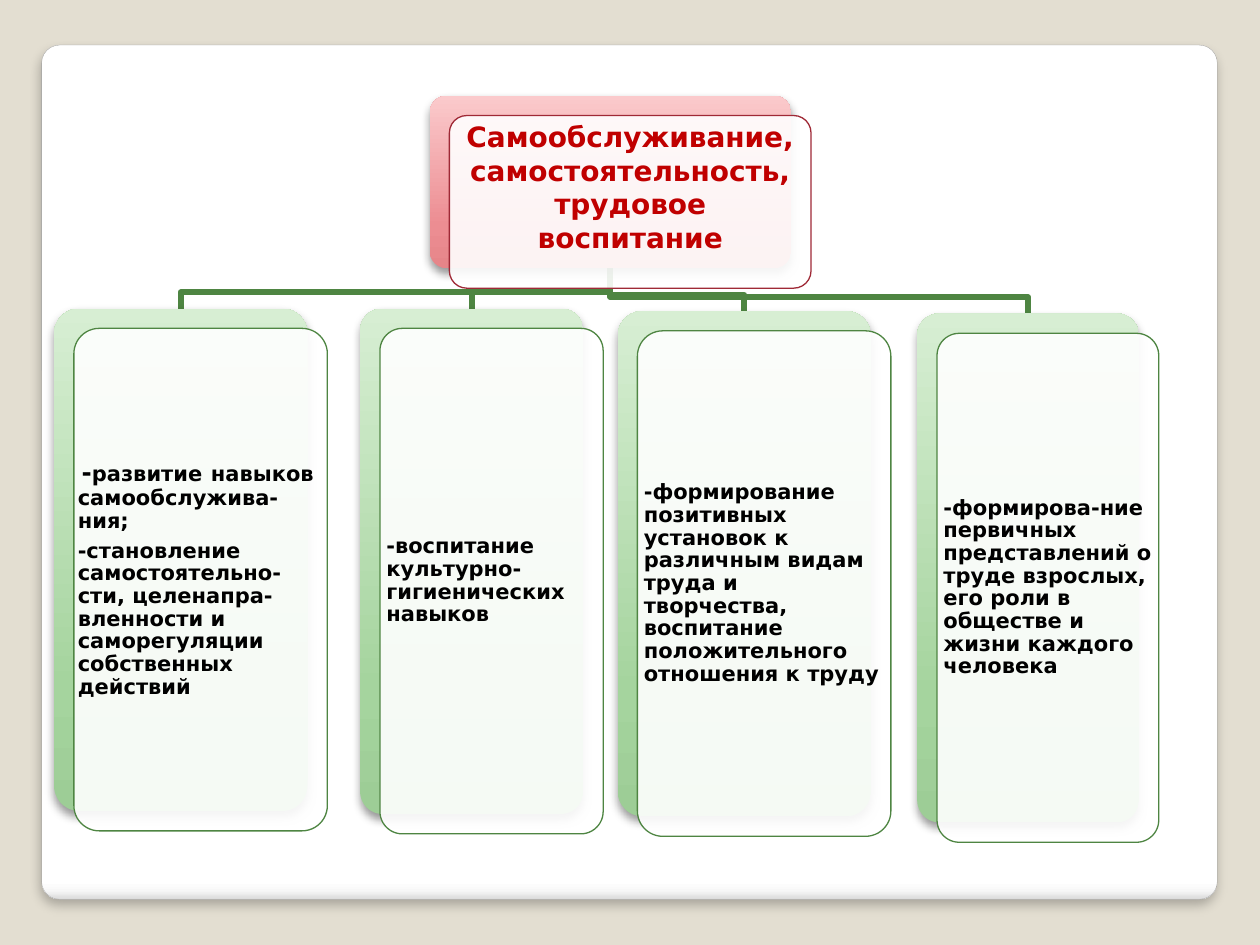
import pptx
import pptx.util
import pptx.dml.color
import pptx.enum.shapes
import pptx.enum.text
import pptx.oxml
import pptx.oxml.ns

Cm, Pt = pptx.util.Cm, pptx.util.Pt
ALIGN = pptx.enum.text.PP_ALIGN
ANCHOR = pptx.enum.text.MSO_ANCHOR
FONT = "DejaVu Sans"
NS = pptx.oxml.ns.nsdecls("a")
SHIFT = 0.4   # offset of a card's face from its back, cm
DROP = 0.33   # height of the last leg of a branch, cm

RED = dict(stops=[(0, "E68589"), (25, "EC8D92"), (100, "FBCACC")], edge="9F2936")
GREEN = dict(stops=[(0, "9DCD96"), (25, "A5D49E"), (100, "D7EED3")], edge="4E8542")
PANEL = [(0, "FFFFFF"), (98, "FFFFFF"), (99, "F7F7F7"), (100, "DADADA")]

# Each card: box (left, top, width, height in cm), inset, paragraphs of (text, size, bold)
CARDS = [
    ((1.09, 6.22, 5.11, 10.13), 0.08, [
        [(" ", 7, False), ("-", 14, True), ("развитие", 12, True), (" ", 14, True),
         ("навыков самообслужива-ния;", 12, True)],
        [("-становление самостоятельно-сти, целенапра-вленности и "
          "саморегуляции собственных действий", 12, True)]]),
    ((7.26, 6.22, 4.5, 10.19), 0.13, [
        [("-воспитание культурно-гигиенических навыков", 12, True)]]),
    ((12.45, 6.27, 5.11, 10.19), 0.13, [
        [("-формирование позитивных установок к различным видам труда и "
          "творчества, воспитание положительного отношения к труду", 12, True)]]),
    ((18.49, 6.32, 4.47, 10.26), 0.13, [
        [("-формирова-ние первичных представлений о труде взрослых, "
          "его роли в обществе и жизни каждого человека", 12, True)]]),
]


def rgb(code):
    return pptx.dml.color.RGBColor.from_string(code)


def place(shape, box):
    shape.left, shape.top, shape.width, shape.height = (Cm(v) for v in box)


def shade(shape, stops, angle):
    """Fill with a linear gradient; the angle runs clockwise in degrees."""
    shape.fill.gradient()
    old = shape.fill._xPr.find(pptx.oxml.ns.qn("a:gradFill"))
    marks = "".join(f'<a:gs pos="{pos * 1000}"><a:srgbClr val="{code}"/></a:gs>'
                    for pos, code in stops)
    new = pptx.oxml.parse_xml(
        f'<a:gradFill {NS} rotWithShape="1"><a:gsLst>{marks}</a:gsLst>'
        f'<a:lin ang="{angle * 60000}" scaled="0"/></a:gradFill>')
    old.getparent().replace(old, new)


def shadow(shape, alpha, blur, dist):
    """Cast a black shadow straight down; lengths in points."""
    shape.shadow.inherit = False
    effects = shape._element.spPr.find(pptx.oxml.ns.qn("a:effectLst"))
    effects.append(pptx.oxml.parse_xml(
        f'<a:outerShdw {NS} blurRad="{Pt(blur)}" dist="{Pt(dist)}" dir="5400000" '
        f'algn="t" rotWithShape="0"><a:srgbClr val="000000">'
        f'<a:alpha val="{alpha * 1000}"/></a:srgbClr></a:outerShdw>'))


def block(slide, box, adj):
    kind = pptx.enum.shapes.MSO_SHAPE.ROUNDED_RECTANGLE
    shape = slide.shapes.add_shape(kind, *(Cm(v) for v in box))
    shape.adjustments[0] = adj
    shape.shadow.inherit = False
    return shape


def write(shape, paras, inset=0.13, top=None, color="000000", align=ALIGN.LEFT,
          anchor=ANCHOR.MIDDLE, lead=0.9, after=4.2):
    frame = shape.text_frame
    frame.word_wrap = True
    frame.auto_size = pptx.enum.text.MSO_AUTO_SIZE.NONE
    frame.vertical_anchor = anchor
    frame.margin_left = frame.margin_right = frame.margin_bottom = Cm(inset)
    frame.margin_top = Cm(inset if top is None else top)
    for i, runs in enumerate(paras):
        para = frame.paragraphs[0] if i == 0 else frame.add_paragraph()
        para.alignment, para.line_spacing = align, lead
        para.space_before, para.space_after = Pt(0), Pt(after)
        for text, size, bold in runs:
            run = para.add_run()
            run.text = text
            run.font.name, run.font.size, run.font.bold = FONT, Pt(size), bold
            run.font.color.rgb = rgb(color)


def panel(slide, box):
    shape = block(slide, box, 0.021)
    shade(shape, PANEL, 90)
    shape.line.color.rgb = rgb("A4A4A4")
    shape.line.width = Pt(0.16)
    shadow(shape, 25, 6, 4)


def branch(slide, head, box):
    """Lead an elbow line from the foot of the head to the top of a card."""
    stem, foot = head[0] + head[2] / 2, head[1] + head[3]
    end, top = box[0] + box[2] / 2, box[1]
    bend = top - DROP
    pen = slide.shapes.build_freeform(Cm(stem), Cm(foot))
    pen.add_line_segments([(Cm(x), Cm(y)) for x, y in
                           [(stem, bend), (end, bend), (end, top)]], close=False)
    line = pen.convert_to_shape()
    line.fill.background()
    line.line.color.rgb = rgb(GREEN["edge"])
    line.line.width = Pt(3.35)
    line.shadow.inherit = False


def card(slide, box, look):
    """Draw a shaded back and a clear face; return the box of the face."""
    back = block(slide, box, 0.1)
    shade(back, look["stops"], 270)
    back.line.fill.background()
    shadow(back, 40, 5.2, 3)
    area = (box[0] + SHIFT, box[1] + SHIFT, box[2], box[3])
    face = block(slide, area, 0.1)
    face.fill.solid()
    face.fill.fore_color.rgb = rgb("FFFFFF")
    tint = face._element.spPr.find(".//" + pptx.oxml.ns.qn("a:srgbClr"))
    tint.append(pptx.oxml.parse_xml(f'<a:alpha {NS} val="90000"/>'))
    face.line.color.rgb = rgb(look["edge"])
    face.line.width = Pt(0.75)
    return area


def heading(slide, box):
    area = card(slide, box, RED)
    title = slide.shapes.title
    place(title, area)
    slide.shapes._spTree.append(title._element)  # bring to the front
    write(title, [[("Самообслуживание, самостоятельность, трудовое воспитание", 16, True)]],
          inset=0.18, top=0.08, color="C00000", align=ALIGN.CENTER,
          anchor=ANCHOR.TOP, lead=1.0, after=0)


def column(slide, box, inset, paras):
    area = card(slide, box, GREEN)
    note = slide.shapes.add_textbox(*(Cm(v) for v in area))
    write(note, paras, inset=inset)


def main():
    deck = pptx.Presentation()
    deck.slide_width, deck.slide_height = Cm(25.4), Cm(19.05)
    slide = deck.slides.add_slide(deck.slide_layouts[5])
    slide.background.fill.solid()
    slide.background.fill.fore_color.rgb = rgb("E3DED1")

    panel(slide, (0.84, 0.91, 23.7, 17.22))
    head = (8.66, 1.93, 7.29, 3.48)
    for box, _, _ in reversed(CARDS):
        branch(slide, head, box)
    heading(slide, head)
    for box, inset, paras in CARDS:
        column(slide, box, inset, paras)
    deck.save("out.pptx")


if __name__ == "__main__":
    main()
